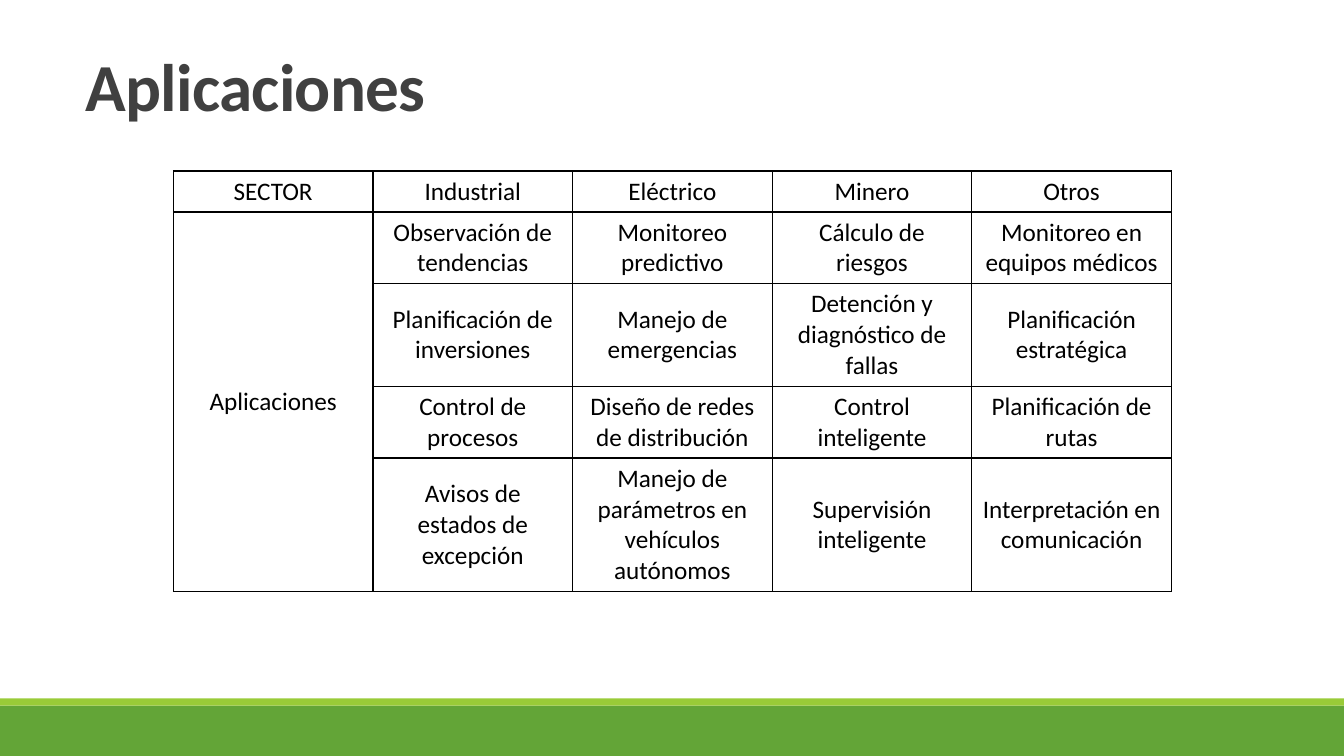
"""Build the slide on applications by sector."""
from lxml.etree import SubElement
from pptx import Presentation
from pptx.dml.color import RGBColor
from pptx.enum.shapes import MSO_SHAPE
from pptx.enum.text import MSO_ANCHOR, PP_ALIGN
from pptx.oxml.ns import qn
from pptx.util import Cm, Pt

GREEN = RGBColor(0x63, 0xA5, 0x37)
LIME = RGBColor(0x99, 0xCB, 0x38)
GREY = RGBColor(0x40, 0x40, 0x40)
BLACK = RGBColor(0, 0, 0)
FONT = "Calibri"

ROWS = [
    ["SECTOR", "Industrial", "Eléctrico", "Minero", "Otros"],
    ["Aplicaciones", "Observación de tendencias", "Monitoreo predictivo",
     "Cálculo de riesgos", "Monitoreo en equipos médicos"],
    ["", "Planificación de inversiones", "Manejo de emergencias",
     "Detención y diagnóstico de fallas", "Planificación estratégica"],
    ["", "Control de procesos", "Diseño de redes de distribución",
     "Control inteligente", "Planificación de rutas"],
    ["", "Avisos de estados de excepción", "Manejo de parámetros en vehículos autónomos",
     "Supervisión inteligente", "Interpretación en comunicación"],
]
ROW_HEIGHTS = [1.03, 1.8, 2.59, 1.8, 3.37]
COLUMN_WIDTH = 5.03


def add_borders(cell):
    """Draw a thin black line on all four sides of a cell."""
    properties = cell._tc.get_or_add_tcPr()
    for position, side in enumerate(("lnL", "lnR", "lnT", "lnB")):
        line = SubElement(properties, qn(f"a:{side}"), w=str(Pt(1)))
        fill = SubElement(line, qn("a:solidFill"))
        SubElement(fill, qn("a:srgbClr"), val=str(BLACK))
        properties.insert(position, line)


presentation = Presentation()
presentation.slide_width = Cm(33.87)
presentation.slide_height = Cm(19.05)
slide = presentation.slides.add_slide(presentation.slide_layouts[5])

for top, height, color in [(17.78, 1.27, GREEN), (17.6, 0.18, LIME)]:
    band = slide.shapes.add_shape(
        MSO_SHAPE.RECTANGLE, Cm(0), Cm(top), presentation.slide_width, Cm(height))
    band.shadow.inherit = False
    band.fill.solid()
    band.fill.fore_color.rgb = color
    band.line.fill.background()

title = slide.shapes.title
title.left, title.top, title.width, title.height = Cm(1.9), Cm(1.3), Cm(30.4), Cm(3.94)
title.text_frame.text = "Aplicaciones"
title.text_frame.vertical_anchor = MSO_ANCHOR.TOP
paragraph = title.text_frame.paragraphs[0]
paragraph.alignment = PP_ALIGN.JUSTIFY
paragraph.line_spacing = 0.85
paragraph.font.name = FONT
paragraph.font.size = Pt(48)
paragraph.font.bold = True
paragraph.font.color.rgb = GREY
paragraph.runs[0]._r.get_or_add_rPr().set("spc", "-50")

table = slide.shapes.add_table(
    len(ROWS), len(ROWS[0]), Cm(4.37), Cm(4.31),
    Cm(COLUMN_WIDTH * len(ROWS[0])), Cm(sum(ROW_HEIGHTS))).table
table.first_row = False
table.horz_banding = False
for column in table.columns:
    column.width = Cm(COLUMN_WIDTH)

for row_index, (texts, height) in enumerate(zip(ROWS, ROW_HEIGHTS)):
    table.rows[row_index].height = Cm(height)
    for column_index, text in enumerate(texts):
        cell = table.cell(row_index, column_index)
        cell.fill.background()
        add_borders(cell)
        cell.vertical_anchor = MSO_ANCHOR.MIDDLE
        cell.text = text
        paragraph = cell.text_frame.paragraphs[0]
        paragraph.alignment = PP_ALIGN.CENTER
        paragraph.font.name = FONT
        paragraph.font.size = Pt(18)
        paragraph.font.color.rgb = BLACK
table.cell(1, 0).merge(table.cell(4, 0))

presentation.save("out.pptx")
